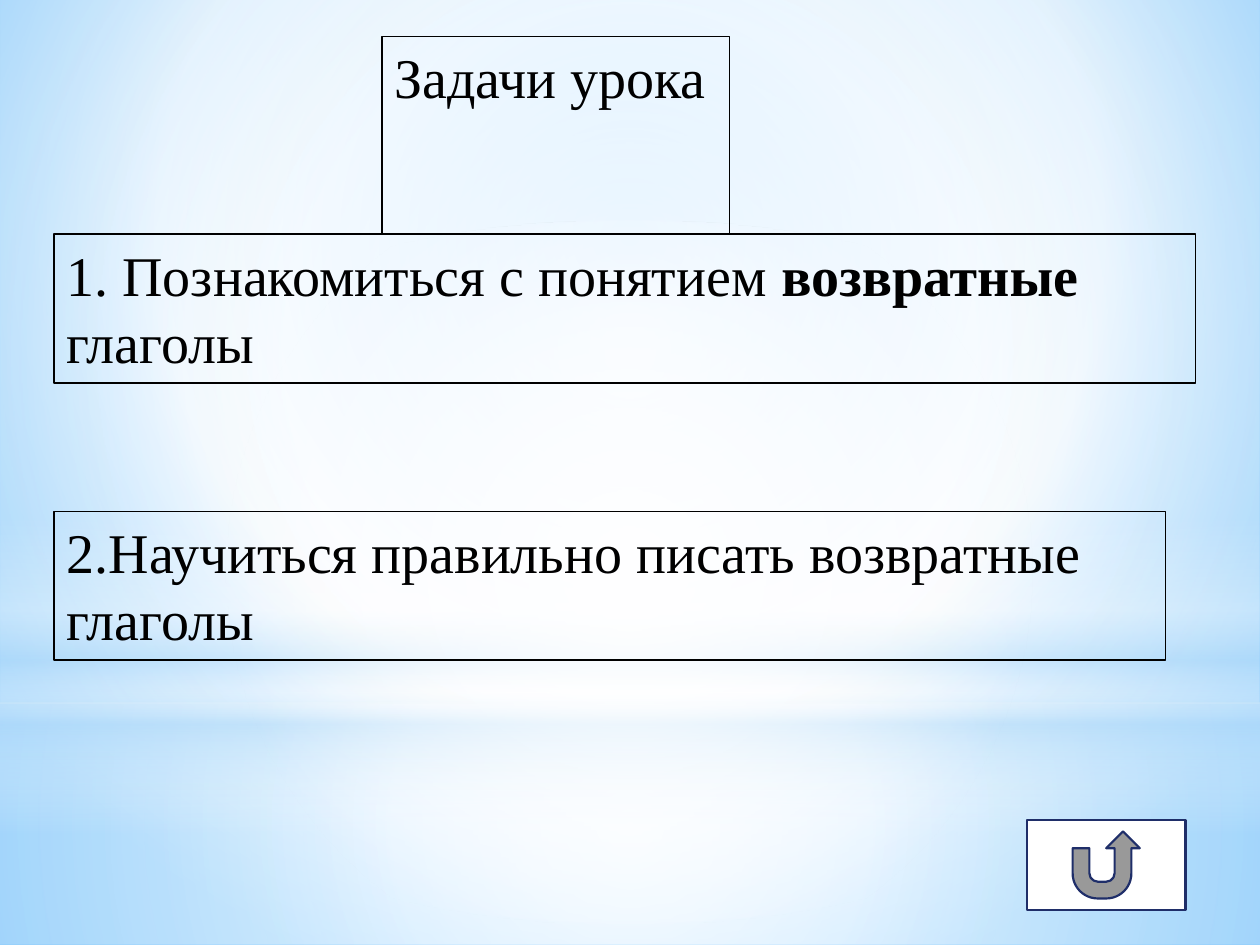
from dataclasses import dataclass

from lxml.etree import SubElement
from pptx import Presentation
from pptx.dml.color import RGBColor
from pptx.enum.shapes import MSO_SHAPE
from pptx.enum.text import MSO_ANCHOR, MSO_AUTO_SIZE, PP_ALIGN
from pptx.oxml import parse_xml
from pptx.oxml.ns import nsdecls, qn
from pptx.util import Inches, Pt


@dataclass(frozen=True)
class Theme:
    font: str = "Times New Roman"
    size: int = 32
    ink: str = "000000"
    white: str = "FFFFFF"
    navy: str = "1F2E69"
    pale: str = "B4DCFA"
    sky: str = "9ED5FF"
    deep: str = "5BB9FF"
    rule: float = 1
    edge: float = 1.25


def shade(root, stops, focus=None):
    """Swap the first solid fill for a gradient: round about focus, else downward.

    Stops are (position, colour, opacity), in percent.
    """
    grad = parse_xml(f'<a:gradFill {nsdecls("a")} rotWithShape="1"><a:gsLst/></a:gradFill>')
    for place, color, alpha in stops:
        stop = SubElement(grad[0], qn("a:gs"), pos=str(place * 1000))
        tint = SubElement(stop, qn("a:srgbClr"), val=color)
        if alpha < 100:
            SubElement(tint, qn("a:alpha"), val=str(alpha * 1000))
    if focus:
        ring = SubElement(grad, qn("a:path"), {"path": "circle"})
        sides = {side: str(share * 1000) for side, share in zip("ltrb", focus)}
        SubElement(ring, qn("a:fillToRect"), sides)
    else:
        SubElement(grad, qn("a:lin"), ang="5400000", scaled="0")
    solid = next(root.iter(qn("a:solidFill")))
    solid.getparent().replace(solid, grad)


class Board:
    """A slide on a grid of 100 columns by 75 rows."""
    cols, rows = 100, 75

    def __init__(self, deck, theme):
        self.theme = theme
        self.wide, self.high = deck.slide_width, deck.slide_height
        self.slide = deck.slides.add_slide(deck.slide_layouts[5])

    def area(self, x, y, w, h):
        dx, dy = self.wide / self.cols, self.high / self.rows
        return [round(n) for n in (x * dx, y * dy, w * dx, h * dy)]

    def ground(self, stops, focus):
        self.slide.background.fill.solid()
        shade(self.slide.element, stops, focus)

    def shape(self, kind, box):
        item = self.slide.shapes.add_shape(kind, *self.area(*box))
        item.shadow.inherit = False
        return item

    def glow(self, kind, box, stops, focus=None):
        item = self.shape(kind, box)
        item.fill.solid()
        item.line.fill.background()
        shade(item.element, stops, focus)

    def outline(self, item, color, width):
        item.line.color.rgb = RGBColor.from_string(color)
        item.line.width = Pt(width)

    def label(self, item, parts):
        """Frame the item and fill it with (text, bold) parts."""
        look = self.theme
        self.outline(item, look.ink, look.rule)
        frame = item.text_frame
        frame.word_wrap = True
        frame.auto_size = MSO_AUTO_SIZE.SHAPE_TO_FIT_TEXT
        frame.vertical_anchor = MSO_ANCHOR.TOP
        para = frame.paragraphs[0]
        para.alignment = PP_ALIGN.LEFT
        para.font.name = look.font
        para.font.size = Pt(look.size)
        para.font.color.rgb = RGBColor.from_string(look.ink)
        for text, bold in parts:
            run = para.add_run()
            run.text = text
            if bold:
                run.font.bold = True

    def title(self, box, text):
        item = self.slide.shapes.title
        item.left, item.top, item.width, item.height = self.area(*box)
        self.slide.shapes.element.append(item.element)  # in front of the glows
        self.label(item, [(text, False)])

    def note(self, box, *parts):
        self.label(self.slide.shapes.add_textbox(*self.area(*box)), parts)

    def button(self, box):
        item = self.shape(MSO_SHAPE.ACTION_BUTTON_RETURN, box)
        item.fill.solid()
        item.fill.fore_color.rgb = RGBColor.from_string(self.theme.white)
        self.outline(item, self.theme.navy, self.theme.edge)


def main():
    deck = Presentation()
    deck.slide_width, deck.slide_height = Inches(10), Inches(7.5)
    look = Theme()
    board = Board(deck, look)
    white, pale = look.white, look.pale
    rect, mid = MSO_SHAPE.RECTANGLE, (50, 50, 50, 50)
    sea = 55.8

    board.ground([(0, look.sky, 100), (60, white, 100), (100, look.deep, 100)],
                 (20, 10, 20, 60))
    board.glow(rect, (0, sea, board.cols, board.rows - sea),
               [(0, white, 91), (37, white, 76), (100, pale, 79)], mid)
    board.glow(rect, (0, 0, board.cols, sea),
               [(0, white, 89), (48, white, 62), (100, pale, 79)], mid)
    board.glow(rect, (0, 41.2, board.cols, 25),
               [(0, white, 0), (29, white, 30), (45, pale, 40),
                (55, white, 26), (65, pale, 60), (100, white, 0)])
    board.glow(MSO_SHAPE.OVAL, (0, 17.5, board.cols, sea),
               [(0, white, 100), (56, white, 0)], mid)

    board.title((30.3, 2.9, 27.6, 6.4), "Задачи урока")
    board.note((4.3, 18.6, 90.6, 11.8), ("1. Познакомиться с понятием ", False),
               ("возвратные", True), (" глаголы", False))
    board.note((4.3, 40.6, 88.2, 11.8),
               ("2.Научиться правильно писать возвратные глаголы", False))
    board.button((81.5, 65.1, 12.6, 7.1))
    deck.save("out.pptx")


if __name__ == "__main__":
    main()
